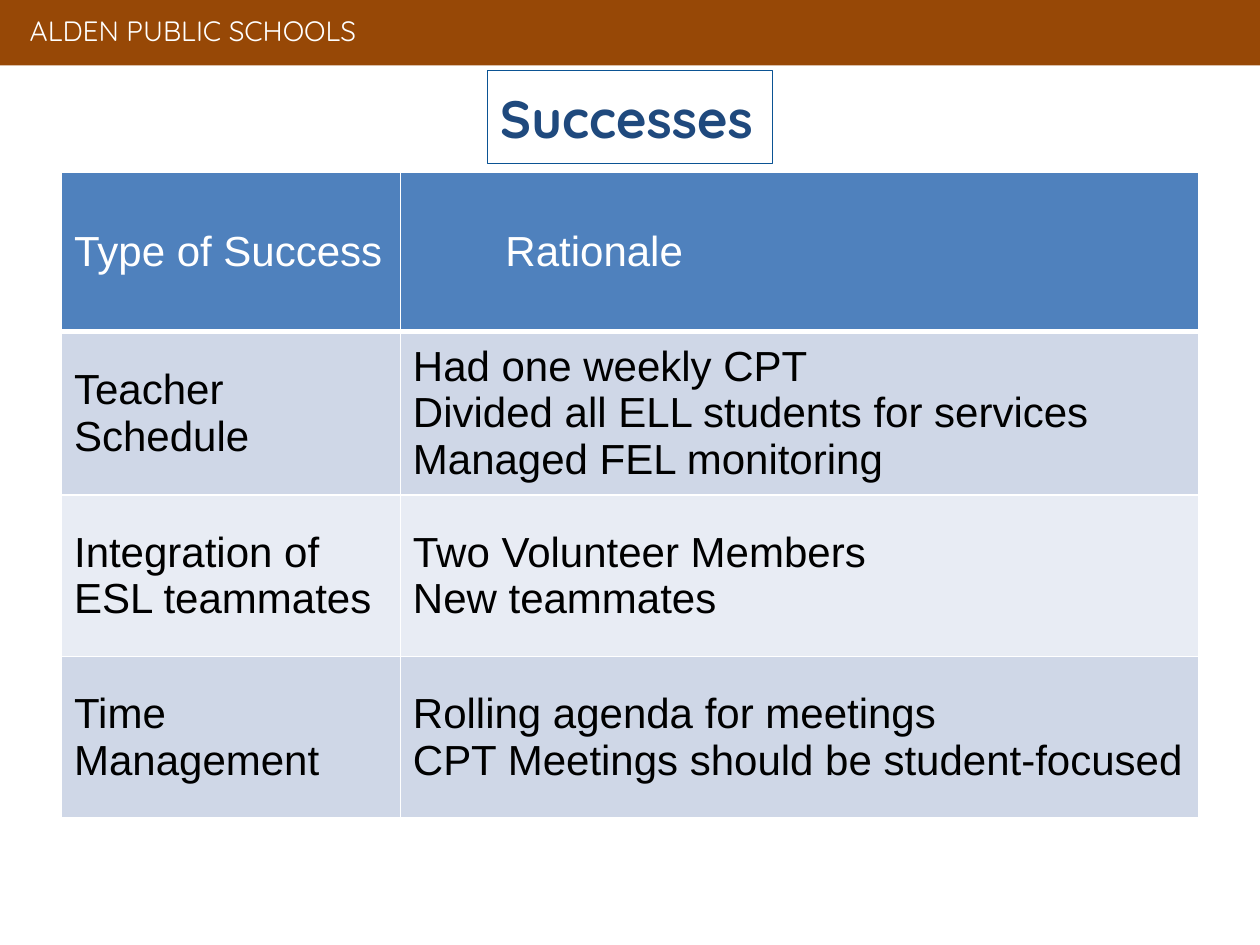
import pptx
import pptx.dml.color
import pptx.enum.shapes
import pptx.enum.text
import pptx.oxml
import pptx.oxml.ns
import pptx.util

Cm = pptx.util.Cm
Pt = pptx.util.Pt
RGBColor = pptx.dml.color.RGBColor
RECTANGLE = pptx.enum.shapes.MSO_SHAPE.RECTANGLE
MIDDLE = pptx.enum.text.MSO_ANCHOR.MIDDLE
LEFT = pptx.enum.text.PP_ALIGN.LEFT

WHITE = RGBColor(0xFF, 0xFF, 0xFF)
BLACK = RGBColor(0x00, 0x00, 0x00)
BROWN = RGBColor(0x97, 0x48, 0x06)
NAVY = RGBColor(0x1F, 0x49, 0x7D)
OUTLINE_BLUE = RGBColor(0x0B, 0x53, 0x94)
HEADER_BLUE = RGBColor(0x4F, 0x81, 0xBD)
BAND_DARK = RGBColor(0xCF, 0xD7, 0xE7)
BAND_LIGHT = RGBColor(0xE8, 0xEC, 0xF4)


def write_lines(frame, lines, color, **font_values):
    """Fill a text frame with one left-aligned paragraph per line."""
    for index, line in enumerate(lines):
        paragraph = frame.paragraphs[0] if index == 0 else frame.add_paragraph()
        paragraph.alignment = LEFT
        run = paragraph.add_run()
        run.text = line
        run.font.color.rgb = color
        for name, value in font_values.items():
            setattr(run.font, name, value)


def add_borders(cell, bottom_width):
    """Draw white cell borders, 1 pt except at the bottom; call before filling."""
    properties = cell._tc.get_or_add_tcPr()
    for side, width in (("L", 1), ("R", 1), ("T", 1), ("B", bottom_width)):
        properties.append(pptx.oxml.parse_xml(
            f'<a:ln{side} {pptx.oxml.ns.nsdecls("a")} w="{Pt(width)}">'
            f'<a:solidFill><a:srgbClr val="{WHITE}"/></a:solidFill></a:ln{side}>'))


presentation = pptx.Presentation()
presentation.slide_width = Cm(25.4)
presentation.slide_height = Cm(19.05)
slide = presentation.slides.add_slide(presentation.slide_layouts[6])

# District banner
banner = slide.shapes.add_shape(RECTANGLE, 0, 0, Cm(25.48), Cm(1.32))
banner.shadow.inherit = False
banner.fill.solid()
banner.fill.fore_color.rgb = BROWN
banner.line.fill.background()

district = slide.shapes.add_textbox(Cm(0.35), Cm(0.15), Cm(7.32), Cm(0.94))
district.text_frame.word_wrap = True
write_lines(district.text_frame, ["ALDEN PUBLIC SCHOOLS"], WHITE,
            name="Quicksand", size=Pt(16))

# Successes and their rationale
successes = [
    (["Type of Success"], ["Rationale"]),
    (["Teacher Schedule"],
     ["Had one weekly CPT", "Divided all ELL students for services",
      "Managed FEL monitoring"]),
    (["Integration of ESL teammates"],
     ["Two Volunteer Members", "New teammates"]),
    (["Time Management"],
     ["Rolling agenda for meetings", "CPT Meetings should be student-focused"]),
]
column_widths = [6.83, 16.1]
row_heights = [3.2, 3.1, 3.25, 3.25]
row_fills = [HEADER_BLUE, BAND_DARK, BAND_LIGHT, BAND_DARK]

table = slide.shapes.add_table(
    len(successes), len(column_widths), Cm(1.24), Cm(3.48),
    Cm(sum(column_widths)), Cm(sum(row_heights))).table
for column, width in zip(table.columns, column_widths):
    column.width = Cm(width)
for row, height in zip(table.rows, row_heights):
    row.height = Cm(height)

for row_index, (entries, row_fill) in enumerate(zip(successes, row_fills)):
    is_header = row_index == 0
    for column_index, lines in enumerate(entries):
        cell = table.cell(row_index, column_index)
        add_borders(cell, 3 if is_header else 1)
        cell.fill.solid()
        cell.fill.fore_color.rgb = row_fill
        cell.vertical_anchor = MIDDLE
        write_lines(cell.text_frame, lines, WHITE if is_header else BLACK,
                    name="Arial", size=Pt(24), bold=False)
table.cell(0, 1).margin_left = Cm(2.12)

# Slide title
title = slide.shapes.add_shape(RECTANGLE, Cm(9.83), Cm(1.42), Cm(5.74), Cm(1.88))
title.shadow.inherit = False
title.fill.background()
title.line.color.rgb = OUTLINE_BLUE
title.line.width = Pt(0.75)
title_format = {
    "margin_left": Cm(0.25), "margin_right": Cm(0.25),
    "margin_top": Cm(0.25), "margin_bottom": Cm(0.25),
    "vertical_anchor": MIDDLE, "word_wrap": False,
}
for name, value in title_format.items():
    setattr(title.text_frame, name, value)
write_lines(title.text_frame, ["Successes"], NAVY,
            name="Quicksand", size=Pt(30), bold=True)

presentation.save("out.pptx")
